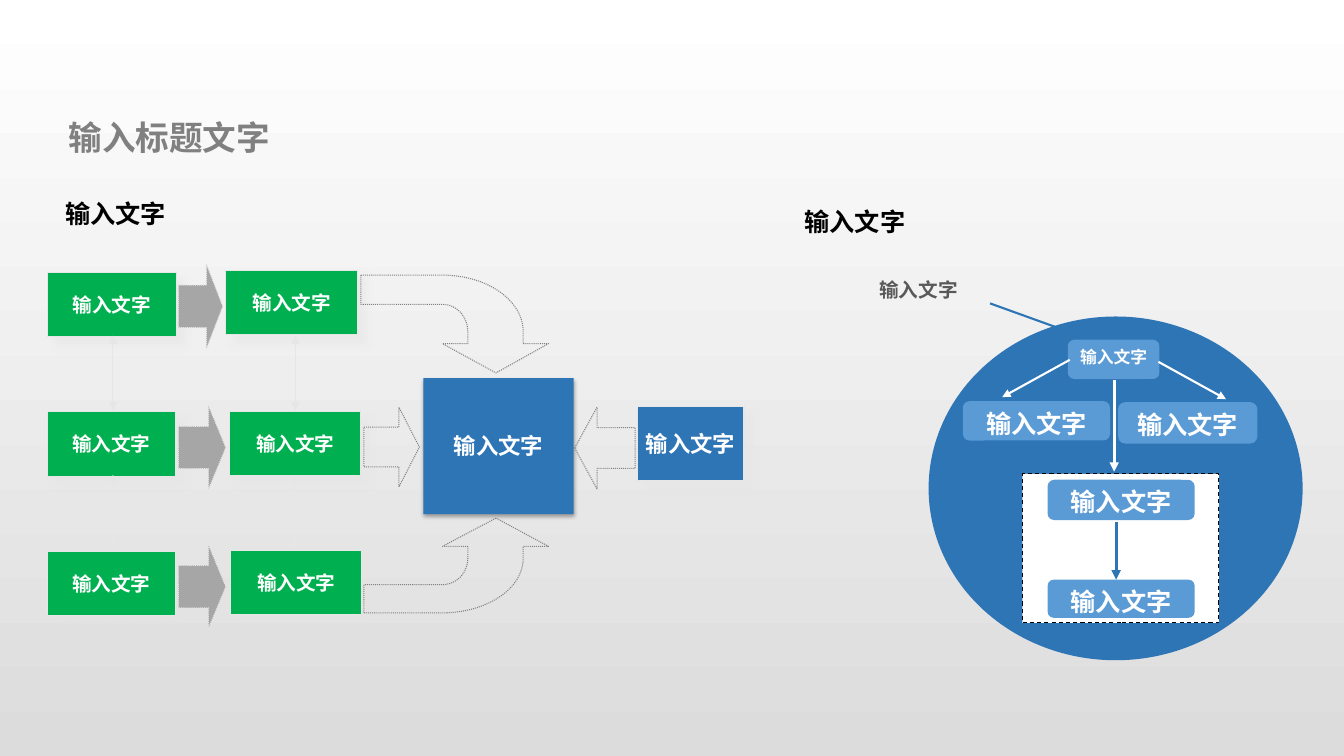
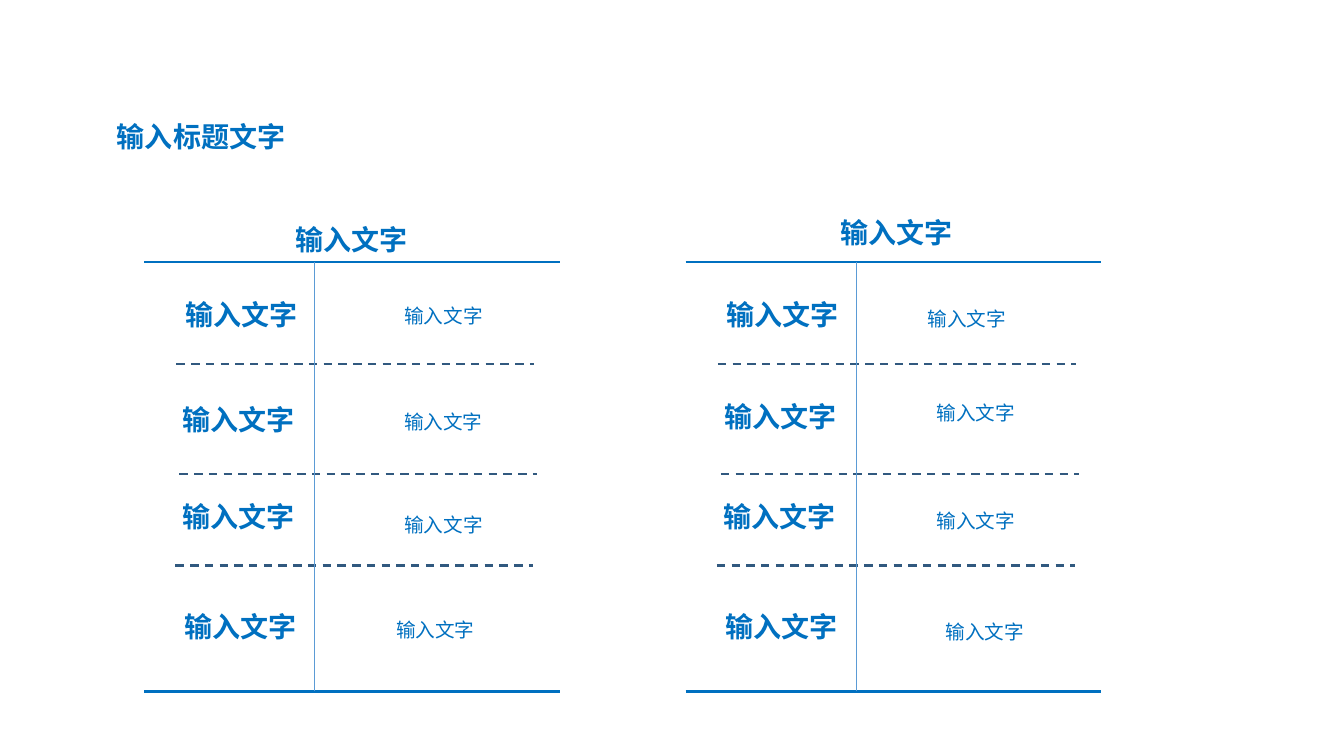
from dataclasses import dataclass
from math import cos, pi, sin

from lxml import etree
from pptx import Presentation
from pptx import util as u
from pptx.dml.color import RGBColor
from pptx.enum import dml, shapes, text
from pptx.oxml.ns import qn

PX = 9144  # one px is a hundredth of an inch


@dataclass(frozen=True)
class Theme:
    font: str = "Noto Sans CJK SC"
    latin: str = "Arial"
    green: str = "00B050"
    blue: str = "2E75B6"
    sky: str = "5B9BD5"
    azure: str = "0070C0"
    navy: str = "31597F"
    white: str = "FFFFFF"
    black: str = "000000"
    fade: str = "DCDCDC"
    pale: str = "E7E6E6"
    silver: str = "A6A6A6"
    grey: str = "808080"
    dark: str = "595959"
    tiny: int = 12
    small: int = 14
    medium: int = 16
    large: int = 18
    title: int = 20
    main_title: int = 24


T = Theme()
DASH, DOT = dml.MSO_LINE.DASH, dml.MSO_LINE.ROUND_DOT
SHAPE = shapes.MSO_SHAPE
TITLE, LABEL = "输入标题文字", "输入文字"
# colour, opacity %, blur pt, distance pt, angle
SOFT_SHADOW = (T.pale, 50, 5, 8.5, 45)
DROP_SHADOW = (T.black, 35, 3.1, 1.8, 90)

# Slide 1 content: each flow row is first box, arrow, second box
FLOW_ROWS = [
    ((47, 270, 128, 64), (177, 262, 44, 84), (224, 268, 131, 64)),
    ((47, 408, 127, 65), (177, 402, 47, 84), (228, 408, 130, 64)),
    ((47, 547, 127, 64), (177, 540, 47, 84), (229, 546, 130, 64)),
]
FLOW_LINK_X, FLOW_LINK_Y = (112, 293), ((333, 407), (471, 545))
HUB, SOURCE = (420, 375, 149, 135), (632, 403, 106, 74)
HUB_ARROWS = [(SHAPE.RIGHT_ARROW, (361, 404, 55, 79)),
              (SHAPE.LEFT_ARROW, (570, 404, 60, 81))]
# start x, outer edge y, inner edge y, turn y, head base y, tip y
BENT_ARROWS = [(358, 273, 302, 329, 341, 370),
               (361, 608, 580, 554, 542, 514)]
HEADINGS = [(55, 192, 481, 40), (788, 200, 481, 40)]
CIRCLE, PANEL = (921, 314, 371, 341), (1014, 470, 195, 148)
NODES = [
    ((1109, 399, 138, 41), T.large), ((955, 398, 146, 39), T.large),
    ((1039, 476, 146, 40), T.large), ((1039, 575, 146, 38), T.large),
    ((1059, 337, 91, 39), T.tiny),
]
# start, end, colour, width, arrowhead
NODE_LINKS = [
    ((1061, 357), (994, 394), T.white, 1.5, True),
    ((1149, 359), (1216, 396), T.white, 1.5, True),
    ((1107, 518), (1107, 575), T.blue, 2.25, True),
    ((1105, 377), (1105, 468), T.white, 2.25, True),
    ((982, 301), (1054, 327), T.blue, 1.5, False),
]
CALLOUT = (789, 259, 244, 45)

# Slide 2 content: left edge, heading, row labels and row details
COLUMNS = [
    (143, (283, 216), [(174, 290), (171, 394), (171, 491), (173, 600)],
     [(391, 290, 211), (391, 395, 177), (391, 497, 178), (383, 601, 192)]),
    (680, (824, 209), [(711, 290), (709, 391), (708, 491), (710, 600)],
     [(910, 293, 211), (919, 386, 173), (919, 493, 157), (928, 603, 303)]),
]
COLUMN_TOP, COLUMN_BOTTOM, COLUMN_WIDTH, DIVIDER_X = 260, 686, 412, 169
DIVIDERS = [(32, 361), (35, 470), (31, 561)]
DIVIDER_WIDTH = 355


def emu(*lengths):
    return [u.Emu(round(length * PX)) for length in lengths]


def rgb(color):
    return RGBColor.from_string(color)


def write(frame, words, size=T.small, color=T.white, bold=True, font=T.font,
          align=text.PP_ALIGN.LEFT, anchor=text.MSO_ANCHOR.TOP, wrap=True,
          spacing=None, fit=text.MSO_AUTO_SIZE.NONE):
    """Fill a text frame with one formatted paragraph."""
    frame.word_wrap, frame.auto_size = wrap, fit
    frame.vertical_anchor = anchor
    para = frame.paragraphs[0]
    para.alignment, para.line_spacing = align, spacing
    span = para.add_run()
    span.text = words
    span.font.name, span.font.size = font, u.Pt(size)
    span.font.bold, span.font.color.rgb = bold, rgb(color)
    east = etree.SubElement(span.font._element, qn("a:ea"))
    east.set("typeface", T.font)


def add_text(page, words, area, **style):
    box = page.shapes.add_textbox(*emu(*area))
    write(box.text_frame, words, fit=text.MSO_AUTO_SIZE.SHAPE_TO_FIT_TEXT, **style)


def add_title(page, words, area, **style):
    title = page.shapes.title
    title.left, title.top, title.width, title.height = emu(*area)
    write(title.text_frame, words, **style)


def stroke(line, color, width, dash=None):
    line.fill.solid()
    line.fill.fore_color.rgb = rgb(color)
    line.width = u.Pt(width)
    if dash:
        line.dash_style = dash


def paint(shape, fill=None, line=None, shadow=None, dash=None):
    """Set fill, outline and shadow; None means without."""
    if fill:
        shape.fill.solid()
        shape.fill.fore_color.rgb = rgb(fill)
    else:
        shape.fill.background()
    if line:
        stroke(shape.line, line, 0.75, dash)
    else:
        shape.line.fill.background()
    shape.shadow.inherit = False
    if shadow:
        color, opacity, blur, distance, angle = shadow
        effects = shape._element.spPr.find(qn("a:effectLst"))
        outer = etree.SubElement(
            effects, qn("a:outerShdw"), blurRad=str(u.Pt(blur)),
            dist=str(u.Pt(distance)), dir=str(angle * 60000), rotWithShape="0")
        tint = etree.SubElement(outer, qn("a:srgbClr"), val=color)
        etree.SubElement(tint, qn("a:alpha"), val=str(opacity * 1000))


def add_shape(page, kind, area, adjust=(), **look):
    shape = page.shapes.add_shape(kind, *emu(*area))
    for index, value in enumerate(adjust):
        shape.adjustments[index] = value
    paint(shape, **look)
    return shape


def add_box(page, area, fill, size, line=T.pale, shadow=SOFT_SHADOW):
    box = add_shape(page, SHAPE.RECTANGLE, area, fill=fill, line=line, shadow=shadow)
    write(box.text_frame, LABEL, size=size, align=text.PP_ALIGN.CENTER,
          anchor=text.MSO_ANCHOR.MIDDLE, wrap=False)


def add_line(page, start, end, color, width, dash=None, heads=()):
    line = page.shapes.add_connector(
        shapes.MSO_CONNECTOR.STRAIGHT, *emu(*start, *end))
    stroke(line.line, color, width, dash)
    for head in heads:
        etree.SubElement(line.line._get_or_add_ln(), qn(head), type="triangle")
    etree.SubElement(line._element.spPr, qn("a:effectLst"))


def quarter_turn(x, y, radius_x, radius_y, steps=24):
    angles = [pi / 2 * step / steps for step in range(steps + 1)]
    return [(x + radius_x * sin(a), y + radius_y * cos(a)) for a in angles]


def add_bent_arrow(page, start, outer, inner, turn, base, tip):
    bend, stem_left, stem_right = 439, 464, 519
    head_left, middle, head_right = 439, 492, 544
    points = [(start, outer)]
    points += quarter_turn(bend, turn, stem_right - bend, outer - turn)
    points += [(stem_right, base), (head_right, base), (middle, tip),
               (head_left, base), (stem_left, base)]
    points += quarter_turn(bend, turn, stem_left - bend, inner - turn)[::-1]
    points += [(start, inner)]
    first, *rest = [emu(*point) for point in points]
    builder = page.shapes.build_freeform(*first, scale=1.0)
    builder.add_line_segments(rest, close=True)
    paint(builder.convert_to_shape(), line=T.grey, dash=DOT)


def build_flow(page):
    fill = page.background.fill
    fill.gradient()
    fill.gradient_angle = 270
    for stop, color in zip(fill.gradient_stops, (T.white, T.fade)):
        stop.color.rgb = rgb(color)
    add_title(page, TITLE, (58, 111, 936, 50), size=T.main_title, color=T.grey)
    for area in HEADINGS:
        add_text(page, LABEL, area, size=T.large, color=T.black, font=T.latin)

    # Process rows leading to the hub
    for first, arrow, second in FLOW_ROWS:
        add_box(page, first, T.green, T.small)
        add_box(page, second, T.green, T.small)
        add_shape(page, SHAPE.RIGHT_ARROW, arrow, (0.5, 0.37),
                  fill=T.silver, line=T.pale, dash=DOT)
    add_box(page, HUB, T.blue, T.medium, line=None, shadow=DROP_SHADOW)
    for arrow in BENT_ARROWS:
        add_bent_arrow(page, *arrow)
    for x in FLOW_LINK_X:
        for top, bottom in FLOW_LINK_Y:
            add_line(page, (x, top), (x, bottom), T.pale, 0.75,
                     heads=("a:headEnd", "a:tailEnd"))
    add_box(page, SOURCE, T.blue, T.medium)
    for kind, area in HUB_ARROWS:
        add_shape(page, kind, area, (0.5, 0.37), line=T.grey, dash=DOT)

    # Tree inside the circle
    add_shape(page, SHAPE.OVAL, CIRCLE, fill=T.blue)
    add_shape(page, SHAPE.RECTANGLE, PANEL, fill=T.white, line=T.black, dash=DASH)
    for area, size in NODES:
        node = add_shape(page, SHAPE.ROUNDED_RECTANGLE, area, (0.167,), fill=T.sky)
        write(node.text_frame, LABEL, size=size, align=text.PP_ALIGN.CENTER)
    for start, end, color, width, arrow in NODE_LINKS:
        add_line(page, start, end, color, width,
                 heads=("a:tailEnd",) if arrow else ())
    add_text(page, LABEL, CALLOUT, color=T.dark, spacing=1.5,
             align=text.PP_ALIGN.CENTER)


def build_comparison(page):
    add_title(page, TITLE, (106, 114, 632, 44), size=T.title, color=T.azure)
    for left, heading, labels, details in COLUMNS:
        # Rules
        for y in (COLUMN_TOP, COLUMN_BOTTOM):
            add_line(page, (left, y), (left + COLUMN_WIDTH, y), T.azure, 1.5)
        for indent, y in DIVIDERS:
            x = left + indent
            add_line(page, (x, y), (x + DIVIDER_WIDTH, y), T.navy, 1.5, dash=DASH)
        x = left + DIVIDER_X
        add_line(page, (x, COLUMN_TOP), (x, COLUMN_BOTTOM), T.sky, 0.5)
        # Text
        for corner in [heading] + labels:
            add_text(page, LABEL, (*corner, 131, 44), size=T.title,
                     color=T.azure, wrap=False)
        for x, y, width in details:
            add_text(page, LABEL, (x, y, width, 41), color=T.azure,
                     bold=False, spacing=1.3)


def main():
    deck = Presentation()
    deck.slide_width, deck.slide_height = emu(1333, 750)
    for build in (build_flow, build_comparison):
        build(deck.slides.add_slide(deck.slide_layouts.get_by_name("Title Only")))
    deck.save("out.pptx")


if __name__ == "__main__":
    main()
